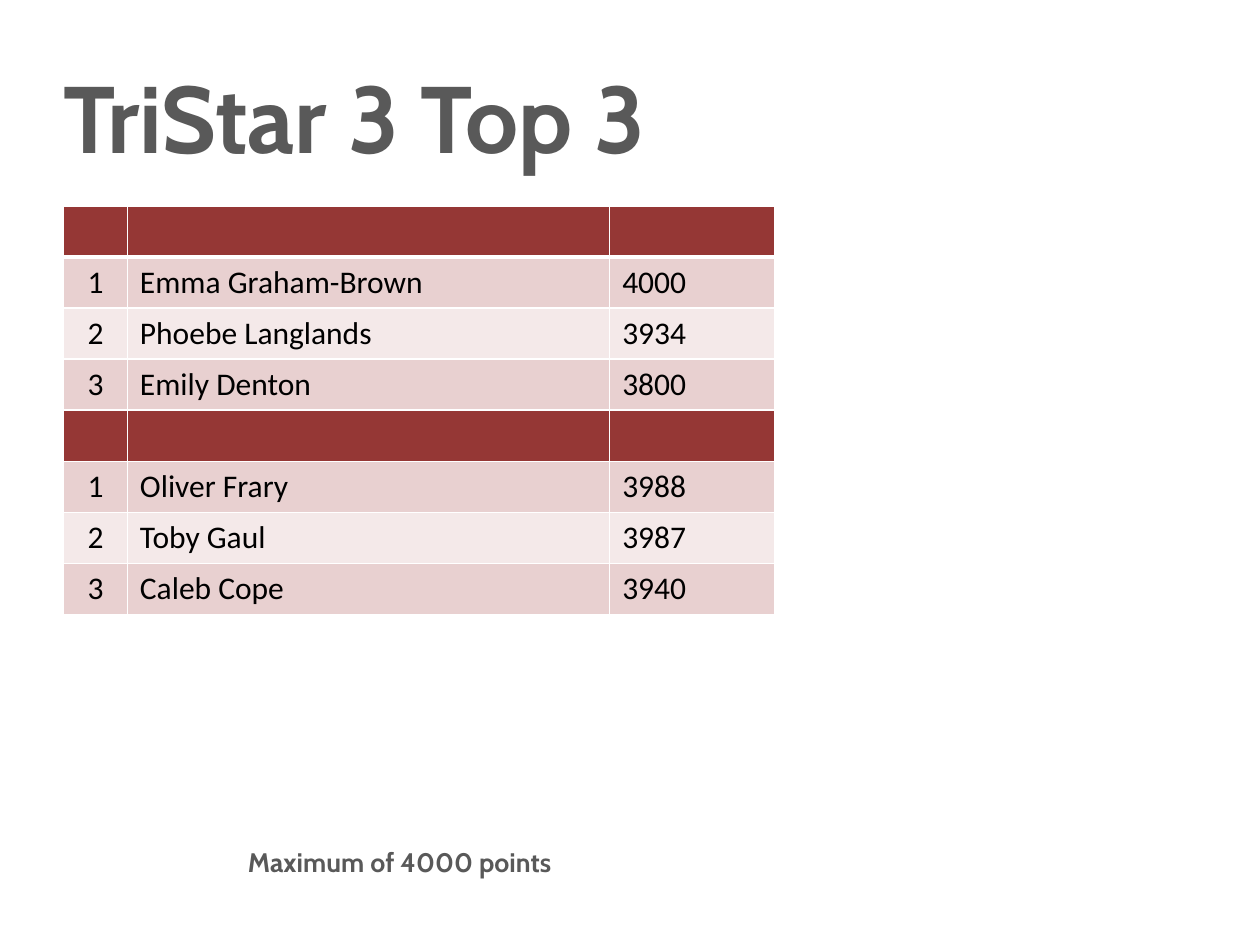
from dataclasses import dataclass

from lxml import etree
from pptx import Presentation
from pptx import util as u
from pptx.dml.color import RGBColor
from pptx.enum import text as t
from pptx.oxml.ns import qn


@dataclass
class Theme:
    head: str = "Cabin"
    body: str = "Calibri"
    grey: str = "595959"
    ink: str = "000000"
    line: str = "FFFFFF"
    red: str = "953735"
    dark: str = "E8D0D0"
    pale: str = "F4E9E9"
    big: float = 54
    mid: float = 18
    small: float = 15.3


def write(frame, words, font, size, color, bold=False, align=t.PP_ALIGN.LEFT, lead=None):
    para = frame.paragraphs[0]
    para.alignment = align
    para.line_spacing = lead
    run = para.add_run()
    run.text = words
    run.font.name = font
    run.font.size = u.Pt(size)
    run.font.bold = bold
    run.font.color.rgb = RGBColor.from_string(color)


def edge(cell, side, color, width):
    """Draw one cell border; call it before the cell is filled."""
    props = cell._tc.get_or_add_tcPr()
    line = etree.SubElement(props, qn(f"a:ln{side}"), w=str(u.Pt(width)))
    fill = etree.SubElement(line, qn("a:solidFill"))
    etree.SubElement(fill, qn("a:srgbClr"), val=color)


class Page:
    def __init__(self, deck, theme):
        self.theme = theme
        self.slide = deck.slides.add_slide(deck.slide_layouts[5])

    def title(self, words, left, top, width, height):
        box, th = self.slide.shapes.title, self.theme
        box.left, box.top = u.Pt(left), u.Pt(top)
        box.width, box.height = u.Pt(width), u.Pt(height)
        frame = box.text_frame
        frame.auto_size = t.MSO_AUTO_SIZE.NONE
        frame.vertical_anchor = t.MSO_ANCHOR.MIDDLE
        frame.margin_left = 0
        write(frame, words, th.head, th.big, th.grey, bold=True, lead=0.8)

    def note(self, words, left, top, width, height):
        th = self.theme
        box = self.slide.shapes.add_textbox(*map(u.Pt, (left, top, width, height)))
        box.text_frame.word_wrap = True
        write(box.text_frame, words, th.head, th.small, th.grey, bold=True)

    def table(self, groups, left, top, cols, row):
        """Stack the groups of (name, points), each under an empty red band."""
        th = self.theme
        rows = []
        for group in groups:
            rows.append((th.red, ("", "", "")))
            for rank, (name, points) in enumerate(group, 1):
                tint = th.dark if rank % 2 else th.pale
                rows.append((tint, (str(rank), name, str(points))))
        size = (left, top, sum(cols), row * len(rows))
        grid = self.slide.shapes.add_table(
            len(rows), len(cols), *map(u.Pt, size)).table
        for col, width in zip(grid.columns, cols):
            col.width = u.Pt(width)
        for r, (tint, words) in enumerate(rows):
            grid.rows[r].height = u.Pt(row)
            for c, word in enumerate(words):
                self.cell(grid.cell(r, c), word, tint, c == 0,
                          over=3 if r == 1 else 1, under=3 if r == 0 else 1)

    def cell(self, cell, word, tint, mid, over, under):
        th = self.theme
        for side, width in zip("LRTB", (1, 1, over, under)):
            edge(cell, side, th.line, width)
        cell.fill.solid()
        cell.fill.fore_color.rgb = RGBColor.from_string(tint)
        if word:
            align = t.PP_ALIGN.CENTER if mid else t.PP_ALIGN.LEFT
            write(cell.text_frame, word, th.body, th.mid, th.ink, align=align)


def main():
    deck = Presentation()
    deck.slide_width, deck.slide_height = u.Pt(720), u.Pt(540)
    page = Page(deck, Theme())
    page.title("TriStar 3 Top 3", 36, 27, 648, 90)
    page.note("Maximum of 4000 points", 134.6, 479.5, 201.6, 28)
    girls = [("Emma Graham-Brown", 4000), ("Phoebe Langlands", 3934), ("Emily Denton", 3800)]
    boys = [("Oliver Frary", 3988), ("Toby Gaul", 3987), ("Caleb Cope", 3940)]
    page.table([girls, boys], left=36.4, top=117.6, cols=(36.4, 275.6, 94.4), row=29.2)
    deck.save("out.pptx")


if __name__ == "__main__":
    main()
